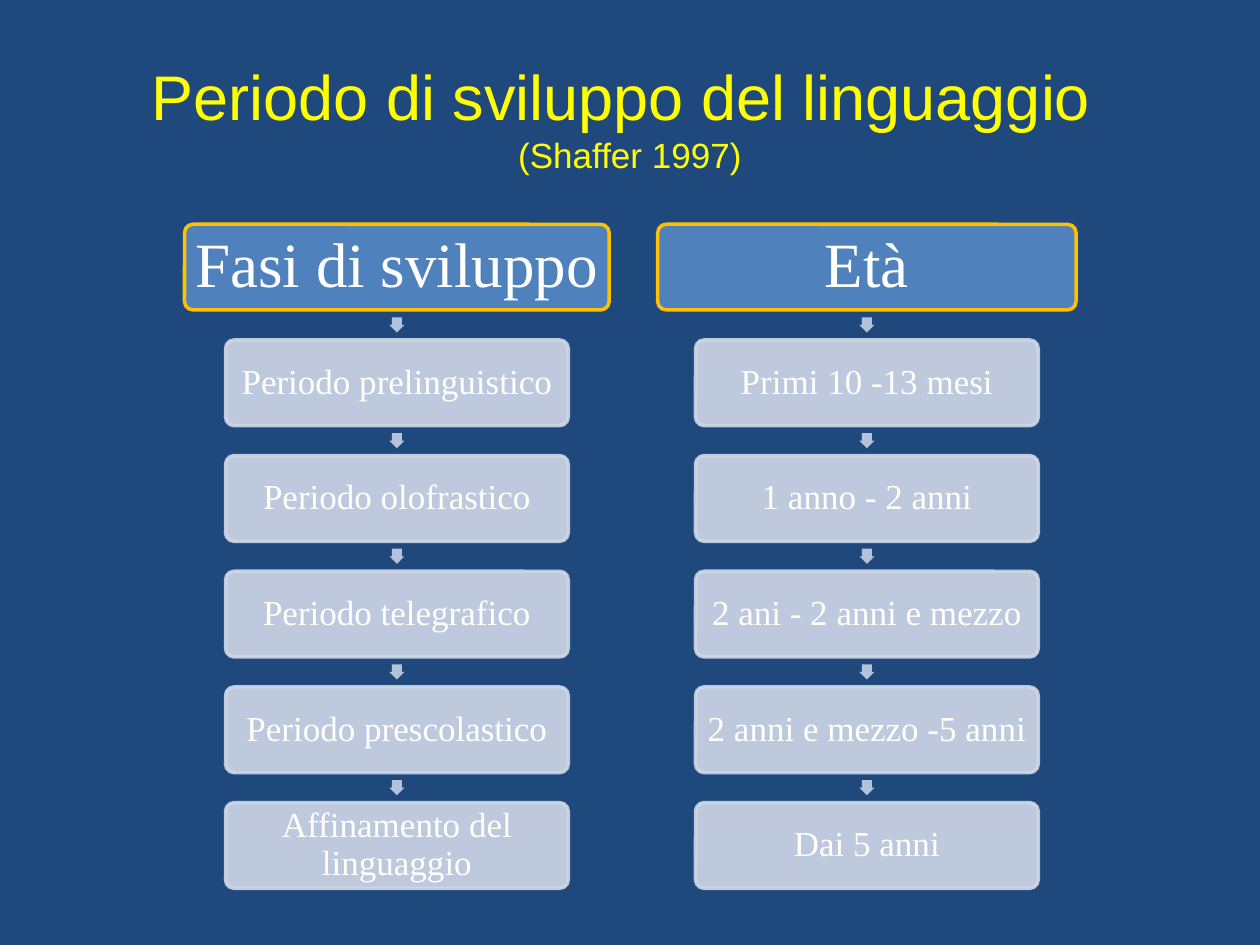
from lxml.etree import SubElement
from pptx import Presentation
from pptx.dml.color import RGBColor
from pptx.enum.shapes import MSO_SHAPE
from pptx.enum.text import MSO_ANCHOR, PP_ALIGN
from pptx.oxml.ns import qn
from pptx.util import Inches, Pt

# Grid, in inches
TOP, PITCH = 1.78, 0.918    # first row, step between rows
HIGH, WIDE = 0.68, 2.72     # box height, step box width
ARROW = 0.12

# Centre, head width, head, steps
COLS = [
    (3.15, 3.37, "Fasi di sviluppo",
     ["Periodo prelinguistico", "Periodo olofrastico", "Periodo telegrafico",
      "Periodo prescolastico", "Affinamento del linguaggio"]),
    (6.88, 3.32, "Età",
     ["Primi 10 -13 mesi", "1 anno - 2 anni", "2 ani - 2 anni e mezzo",
      "2 anni e mezzo -5 anni", "Dai 5 anni"]),
]


def paint(fill, color, alpha=100):
    fill.solid()
    fill.fore_color.rgb = RGBColor.from_string(color)
    if alpha < 100:
        tint = fill._xPr.find(qn("a:solidFill"))[0]
        SubElement(tint, qn("a:alpha"), val=str(alpha * 1000))


def add_run(para, text, size, font, color):
    run = para.add_run()
    run.text = text
    run.font.size = Pt(size)
    run.font.name = font
    paint(run.font.fill, color)


def set_frame(frame, inset):
    frame.word_wrap = True
    frame.vertical_anchor = MSO_ANCHOR.MIDDLE
    frame.margin_left = frame.margin_right = Inches(inset)
    frame.margin_top = frame.margin_bottom = Inches(inset)
    para = frame.paragraphs[0]
    para.alignment = PP_ALIGN.CENTER
    return para


def add_title(slide):
    box = slide.shapes.add_textbox(
        Inches(0.5), Inches(0.3), Inches(9), Inches(1.25))
    para = set_frame(box.text_frame, 0.05)
    add_run(para, "Periodo di sviluppo del linguaggio ", 36, "Arial", "FFFF00")
    para.add_line_break()
    add_run(para, "(Shaffer 1997)", 20, "Arial", "FFFF00")


def add_form(slide, kind, mid, top, wide, high, color, alpha=100):
    form = slide.shapes.add_shape(
        kind, Inches(mid - wide / 2), Inches(top), Inches(wide), Inches(high))
    form.shadow.inherit = False
    paint(form.fill, color, alpha)
    return form


def add_box(slide, mid, row, wide, text, size, inset, fill, edge, alpha=100):
    box = add_form(slide, MSO_SHAPE.ROUNDED_RECTANGLE, mid,
                   TOP + row * PITCH, wide, HIGH, fill, alpha)
    box.adjustments[0] = 0.1
    box.line.width = Pt(2)
    paint(box.line.fill, edge, alpha)
    para = set_frame(box.text_frame, inset)
    para.line_spacing = 0.9
    add_run(para, text, size, "Times New Roman", "FFFFFF")


def add_arrow(slide, mid, row):
    gap = PITCH - HIGH
    top = TOP + row * PITCH - (gap + ARROW) / 2
    arrow = add_form(slide, MSO_SHAPE.RIGHT_ARROW, mid, top,
                     ARROW, ARROW, "B3C1DB")
    arrow.rotation = 90
    arrow.adjustments[0] = 0.667
    arrow.line.fill.background()


def main():
    deck = Presentation()
    deck.slide_width, deck.slide_height = Inches(10), Inches(7.5)
    slide = deck.slides.add_slide(deck.slide_layouts[6])
    paint(slide.background.fill, "1F497D")

    add_title(slide)

    # Each column: a head, then steps joined by arrows
    for mid, wide, head, steps in COLS:
        add_box(slide, mid, 0, wide, head, 36, 0.05, "4F81BD", "FFC000")
        for row, step in enumerate(steps, 1):
            add_arrow(slide, mid, row)
            add_box(slide, mid, row, WIDE, step, 20, 0.03,
                    "D0D8E8", "D0D8E8", 90)

    deck.save("out.pptx")


if __name__ == "__main__":
    main()
